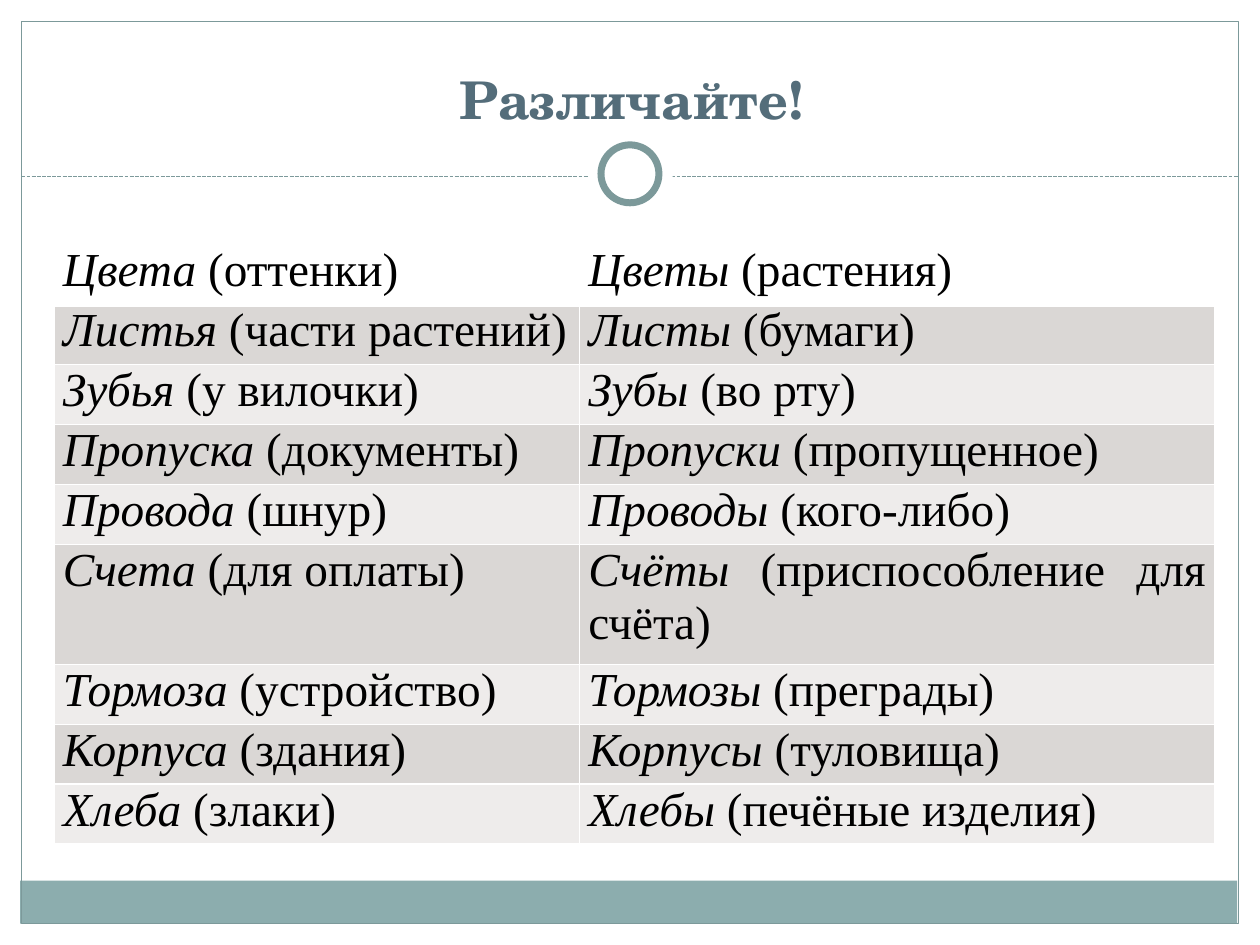
from lxml.etree import SubElement
from pptx import Presentation
from pptx.dml.color import RGBColor
from pptx.enum.dml import MSO_LINE
from pptx.enum.shapes import MSO_CONNECTOR as CONN, MSO_SHAPE as SHAPE
from pptx.enum.text import MSO_ANCHOR as ANCHOR, PP_ALIGN as ALIGN
from pptx.oxml.ns import qn
from pptx.util import Inches, Pt

TITLE = "Различайте!"
PAIRS = [  # (word, meaning) on the left and on the right
    (("Цвета", "(оттенки)"), ("Цветы", "(растения)")),
    (("Листья", "(части растений)"), ("Листы", "(бумаги)")),
    (("Зубья", "(у вилочки)"), ("Зубы", "(во рту)")),
    (("Пропуска", "(документы)"), ("Пропуски", "(пропущенное)")),
    (("Провода", "(шнур)"), ("Проводы", "(кого-либо)")),
    (("Счета", "(для оплаты)"), ("Счёты", "(приспособление для счёта)")),
    (("Тормоза", "(устройство)"), ("Тормозы", "(преграды)")),
    (("Корпуса", "(здания)"), ("Корпусы", "(туловища)")),
    (("Хлеба", "(злаки)"), ("Хлебы", "(печёные изделия)")),
]
TALL_ROW = 5
COL_WIDTHS = (4.17, 5.04)
ROW_HEIGHT = 0.476

THEME = {
    "white": "FFFFFF", "bar": "8CADAE", "line": "7C999A",
    "bands": ("EEECEB", "DAD7D5"),
    "title": {"name": "TeX Gyre Schola", "size": Pt(29.7), "bold": True},
    "title_color": "546D7A",
    "cell": {"name": "Times New Roman", "size": Pt(27)},
    "cell_color": "000000",
}
WHITE, LINE = THEME["white"], THEME["line"]

FRAME = [  # shape, box, fill, line width
    (SHAPE.RECTANGLE, (0, 0, 10, 1.52), WHITE, None),
    (SHAPE.RECTANGLE, (0, 0, 0.17, 7.5), WHITE, None),
    (SHAPE.RECTANGLE, (9.83, 0, 0.17, 7.5), WHITE, None),
    (SHAPE.RECTANGLE, (0.16, 6.99, 9.66, 0.34), THEME["bar"], None),
    (SHAPE.RECTANGLE, (0.17, 0.17, 9.66, 7.16), None, 0.75),
]
RING = [
    (SHAPE.OVAL, (4.67, 1.05, 0.67, 0.67), WHITE, None),
    (SHAPE.OVAL, (4.77, 1.15, 0.46, 0.46), WHITE, 4),
]


def rgb(color):
    return RGBColor.from_string(color)


def add_run(p, text, fmt, color):
    r = p.add_run()
    r.text = text
    for name, value in fmt.items():
        setattr(r.font, name, value)
    r.font.color.rgb = rgb(color)


def add_shapes(slide, items):
    for kind, box, fill, width in items:
        sp = slide.shapes.add_shape(kind, *map(Inches, box))
        sp.shadow.inherit = False
        if fill:
            sp.fill.solid()
            sp.fill.fore_color.rgb = rgb(fill)
        else:
            sp.fill.background()
        if width:
            sp.line.color.rgb = rgb(LINE)
            sp.line.width = Pt(width)
        else:
            sp.line.fill.background()


def add_divider(slide):
    ends = map(Inches, (0.17, 1.4, 9.83, 1.4))
    line = slide.shapes.add_connector(CONN.STRAIGHT, *ends)
    line.line.color.rgb = rgb(LINE)
    line.line.width = Pt(0.75)
    line.line.dash_style = MSO_LINE.SQUARE_DOT
    SubElement(line._element.spPr, qn("a:effectLst"))


def add_title(slide):
    tf = slide.shapes.add_textbox(*map(Inches, (0.35, 0.29, 9.33, 0.79))).text_frame
    tf.word_wrap = True
    tf.vertical_anchor = ANCHOR.BOTTOM
    p = tf.paragraphs[0]
    p.alignment = ALIGN.CENTER
    add_run(p, TITLE, THEME["title"], THEME["title_color"])


def set_borders(cell, bottom):
    """Draw white cell borders; they must come before the fill in tcPr."""
    tc_pr = cell._tc.get_or_add_tcPr()
    for side in "LRTB":
        width = Pt(bottom if side == "B" else 1)
        ln = SubElement(tc_pr, qn(f"a:ln{side}"), w=str(width))
        SubElement(SubElement(ln, qn("a:solidFill")), qn("a:srgbClr"), val=WHITE)


def fill_cell(cell, row, word, meaning):
    set_borders(cell, 1 if row else 3)
    cell.fill.solid()
    cell.fill.fore_color.rgb = rgb(THEME["bands"][row % 2] if row else WHITE)
    margins = {"margin_left": 0.07, "margin_right": 0.07, "margin_top": 0, "margin_bottom": 0}
    for name, value in margins.items():
        setattr(cell, name, Inches(value))
    p = cell.text_frame.paragraphs[0]
    p.alignment = ALIGN.JUSTIFY
    for text, italic in ((word, True), (" " + meaning, False)):
        add_run(p, text, {**THEME["cell"], "italic": italic}, THEME["cell_color"])


def add_pairs_table(slide):
    heights = [ROW_HEIGHT * (2 if i == TALL_ROW else 1) for i in range(len(PAIRS))]
    box = map(Inches, (0.43, 1.94, sum(COL_WIDTHS), sum(heights)))
    table = slide.shapes.add_table(len(PAIRS), len(COL_WIDTHS), *box).table
    for col, width in zip(table.columns, COL_WIDTHS):
        col.width = Inches(width)
    for i, (pair, height) in enumerate(zip(PAIRS, heights)):
        table.rows[i].height = Inches(height)
        for j, (word, meaning) in enumerate(pair):
            fill_cell(table.cell(i, j), i, word, meaning)


def main():
    prs = Presentation()
    prs.slide_width, prs.slide_height = Inches(10), Inches(7.5)
    s = prs.slides.add_slide(prs.slide_layouts[6])
    add_shapes(s, FRAME)
    add_divider(s)
    add_shapes(s, RING)
    add_title(s)
    add_pairs_table(s)
    prs.save("out.pptx")


if __name__ == "__main__":
    main()
